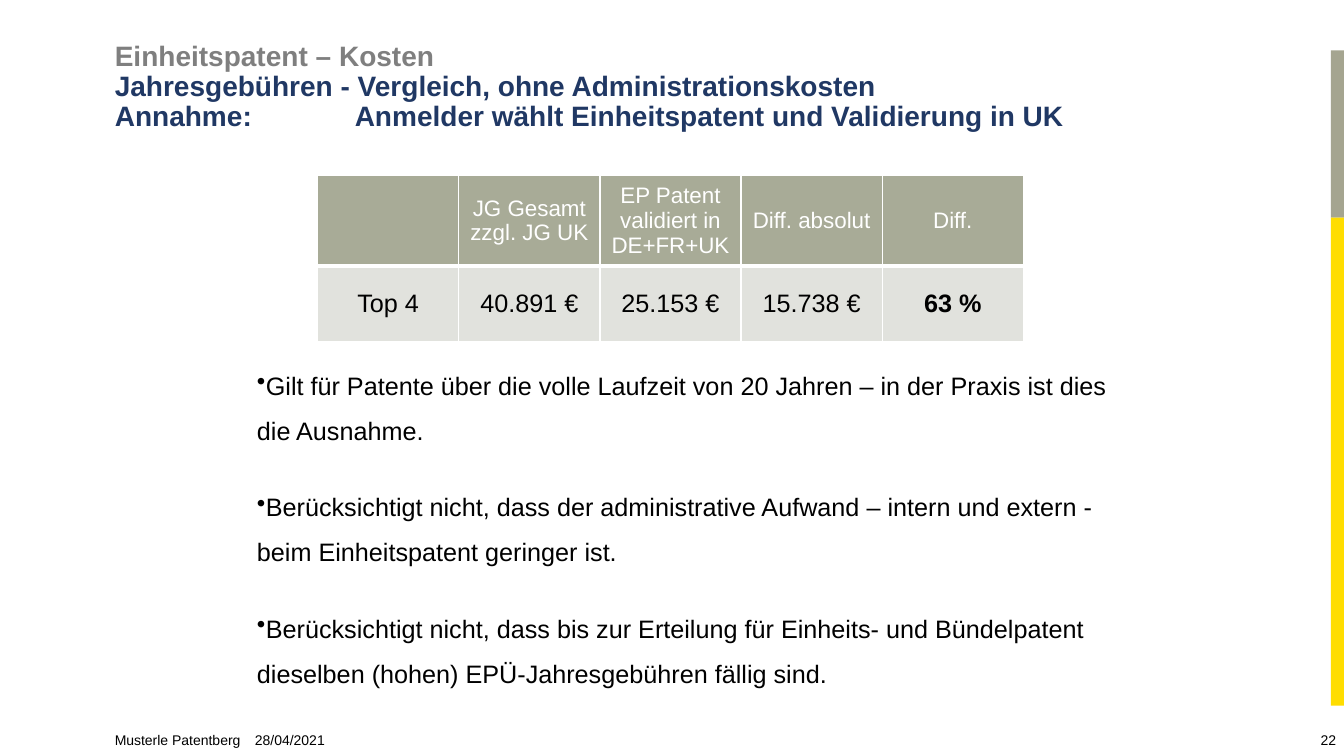
"""Build a slide comparing renewal fees of the unitary patent."""
import pptx
import pptx.dml.color
import pptx.enum.shapes
import pptx.enum.text
import pptx.oxml.ns
import pptx.util
from lxml import etree
from pptx.util import Inches

RGBColor = pptx.dml.color.RGBColor
ALIGN = pptx.enum.text.PP_ALIGN
ANCHOR = pptx.enum.text.MSO_ANCHOR

BLACK = RGBColor(0x00, 0x00, 0x00)
WHITE = RGBColor(0xFF, 0xFF, 0xFF)
GREY = RGBColor(0x7F, 0x7F, 0x7F)
NAVY = RGBColor(0x20, 0x38, 0x64)
OLIVE = RGBColor(0xA5, 0xA5, 0x90)
YELLOW = RGBColor(0xFF, 0xDD, 0x00)
HEADER_FILL = RGBColor(0xA8, 0xAB, 0x97)
BODY_FILL = RGBColor(0xE1, 0xE2, 0xDD)


def add_element(parent, tag, **attributes):
    return etree.SubElement(parent, pptx.oxml.ns.qn(tag), attributes)


class SlideBuilder:
    font_name = "Arial"

    def __init__(self, slide):
        self.slide = slide

    def style(self, paragraph, size, color, bold=False, align=ALIGN.LEFT):
        paragraph.alignment = align
        for run in paragraph.runs:
            run.font.name = self.font_name
            run.font.size = pptx.util.Pt(size)
            run.font.bold = bold
            run.font.color.rgb = color

    def bar(self, left, top, width, height, color):
        shape = self.slide.shapes.add_shape(
            pptx.enum.shapes.MSO_SHAPE.RECTANGLE,
            Inches(left), Inches(top), Inches(width), Inches(height))
        shape.shadow.inherit = False
        shape.fill.solid()
        shape.fill.fore_color.rgb = color
        shape.line.fill.background()

    def text(self, box, text, size, color=BLACK, bold=False, align=ALIGN.LEFT,
             anchor=ANCHOR.TOP, tab=None, bullet=None):
        shape = self.slide.shapes.add_textbox(*map(Inches, box))
        frame = shape.text_frame
        frame.word_wrap = True
        frame.vertical_anchor = anchor
        frame.text = text
        for paragraph in frame.paragraphs:
            properties = paragraph._p.get_or_add_pPr()
            if bullet:
                add_element(properties, "a:buChar", char=bullet)
            if tab:
                tabs = add_element(properties, "a:tabLst")
                add_element(tabs, "a:tab", pos=str(Inches(tab)), algn="l")
            self.style(paragraph, size, color, bold, align)
        return frame.paragraphs

    def border(self, cell, bottom):
        properties = cell._tc.get_or_add_tcPr()
        for side, width in (("L", 1), ("R", 1), ("T", 1), ("B", bottom)):
            line = add_element(properties, f"a:ln{side}", w=str(pptx.util.Pt(width)))
            fill = add_element(line, "a:solidFill")
            add_element(fill, "a:srgbClr", val=str(WHITE))

    def table(self, left, top, column_width, row_heights, rows):
        count = len(rows[0])
        table = self.slide.shapes.add_table(
            len(rows), count, Inches(left), Inches(top),
            Inches(column_width * count), Inches(sum(row_heights))).table
        for column in table.columns:
            column.width = Inches(column_width)
        for row_index, values in enumerate(rows):
            header = row_index == 0
            table.rows[row_index].height = Inches(row_heights[row_index])
            for column_index, value in enumerate(values):
                cell = table.cell(row_index, column_index)
                self.border(cell, 3 if header else 1)
                cell.fill.solid()
                cell.fill.fore_color.rgb = HEADER_FILL if header else BODY_FILL
                cell.vertical_anchor = ANCHOR.MIDDLE
                cell.text = value
                self.style(cell.text_frame.paragraphs[0], 16 if header else 18,
                           WHITE if header else BLACK,
                           not header and column_index == count - 1, ALIGN.CENTER)


def main():
    presentation = pptx.Presentation()
    presentation.slide_width = Inches(13.33)
    presentation.slide_height = Inches(7.5)
    builder = SlideBuilder(presentation.slides.add_slide(presentation.slide_layouts[6]))

    builder.bar(13.2, 0.5, 0.13, 1.66, OLIVE)
    builder.bar(13.2, 2.16, 0.13, 4.84, YELLOW)
    builder.text((1.04, 7.21, 10.57, 0.27), "Musterle Patentberg\t28/04/2021", 10, tab=1.39)
    builder.text((12.47, 7.21, 0.88, 0.27), "22", 10, align=ALIGN.RIGHT,
                 anchor=ANCHOR.MIDDLE)

    title = builder.text(
        (1.04, 0.37, 10.58, 1.02),
        "Einheitspatent – Kosten\v"
        "Jahresgebühren - Vergleich, ohne Administrationskosten\v"
        "Annahme:\tAnmelder wählt Einheitspatent und Validierung in UK",
        20, NAVY, bold=True, tab=2.38)[0]
    title.line_spacing = 0.9
    title.runs[0].font.color.rgb = GREY

    notes = builder.text(
        (2.45, 3.47, 8.7, 3.39),
        "Gilt für Patente über die volle Laufzeit von 20 Jahren – in der Praxis "
        "ist dies die Ausnahme.\n"
        "Berücksichtigt nicht, dass der administrative Aufwand – intern und extern - "
        "beim Einheitspatent geringer ist.\n"
        "Berücksichtigt nicht, dass bis zur Erteilung für Einheits- und Bündelpatent "
        "dieselben (hohen) EPÜ-Jahresgebühren fällig sind.",
        18, bullet="•")
    for index, paragraph in enumerate(notes):
        paragraph.line_spacing = 1.5
        paragraph.space_before = pptx.util.Pt(10 if index else 0)
        paragraph.space_after = pptx.util.Pt(12)

    builder.table(3.15, 1.74, 1.4, (0.89, 0.75), (
        ("", "JG Gesamt zzgl. JG UK", "EP Patent validiert in DE+FR+UK",
         "Diff. absolut", "Diff."),
        ("Top 4", "40.891 €", "25.153 €", "15.738 €", "63 %")))

    presentation.save("out.pptx")


if __name__ == "__main__":
    main()
